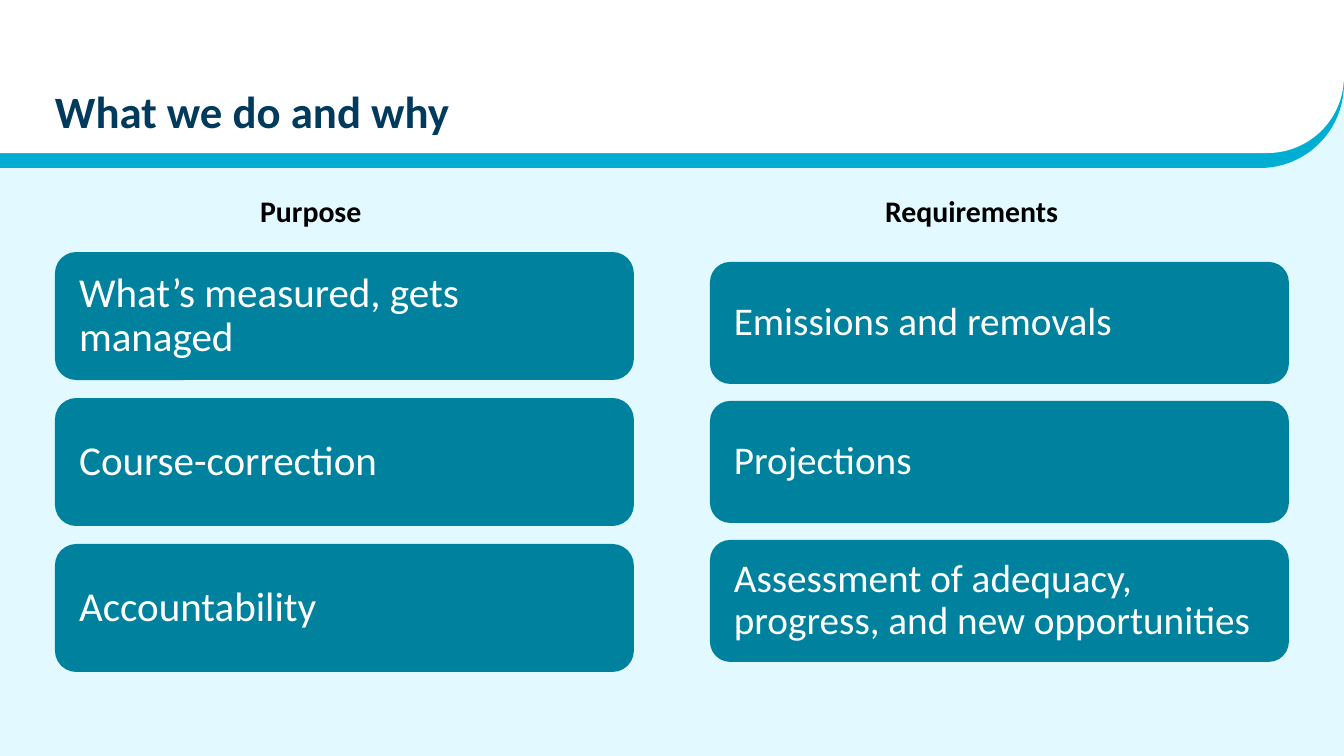
import pptx
import pptx.dml.color
import pptx.enum.shapes
import pptx.enum.text
import pptx.util

SLIDE_WIDTH, SLIDE_HEIGHT = 1344, 756
EMU_PER_PX = pptx.util.Inches(10) / SLIDE_WIDTH

TITLE = "What we do and why"
COLUMNS = [
    {
        "heading": "Purpose", "heading_left": 247,
        "left": 55, "top": 252, "card_height": 128, "gap": 18, "size": "purpose",
        "cards": ["What’s measured, gets managed", "Course-correction", "Accountability"],
    },
    {
        "heading": "Requirements", "heading_left": 872,
        "left": 710, "top": 262, "card_height": 122, "gap": 17, "size": "requirements",
        "cards": [
            "Emissions and removals",
            "Projections",
            "Assessment of adequacy, progress, and new opportunities",
        ],
    },
]
CARD_WIDTH = 579
CARD_INSET = 18
HEADING_TOP, HEADING_WIDTH, HEADING_HEIGHT = 186, 220, 50
TITLE_BOX = (55, 40, 1196, 147)
BANDS = [("accent", 168), ("white", 153)]

THEME = {
    "font": "Calibri",
    "colors": {
        "background": "E1F9FF", "accent": "00ADD3", "white": "FFFFFF",
        "title": "003A5D", "card": "00829E", "heading": "000000",
    },
    "sizes": {"title": 24, "heading": 16, "purpose": 22, "requirements": 21},
}


def px(*lengths):
    return [pptx.util.Emu(round(length * EMU_PER_PX)) for length in lengths]


def color(name):
    return pptx.dml.color.RGBColor.from_string(THEME["colors"][name])


def write(shape, text, size, color_name, inset=None, bold=False, line_spacing=None):
    """Put one left-aligned, vertically centred paragraph in a shape."""
    frame = shape.text_frame
    frame.text = text
    frame.word_wrap = True
    frame.auto_size = pptx.enum.text.MSO_AUTO_SIZE.NONE
    frame.vertical_anchor = pptx.enum.text.MSO_ANCHOR.MIDDLE
    if inset is not None:
        (margin,) = px(inset)
        frame.margin_left = frame.margin_right = margin
        frame.margin_top = frame.margin_bottom = margin
    paragraph = frame.paragraphs[0]
    paragraph.alignment = pptx.enum.text.PP_ALIGN.LEFT
    paragraph.line_spacing = line_spacing
    font = paragraph.runs[0].font
    font.name = THEME["font"]
    font.size = pptx.util.Pt(THEME["sizes"][size])
    font.bold = bold
    font.color.rgb = color(color_name)


def add_filled_shape(slide, kind, box, color_name):
    shape = slide.shapes.add_shape(kind, *px(*box))
    shape.shadow.inherit = False
    shape.fill.solid()
    shape.fill.fore_color.rgb = color(color_name)
    shape.line.fill.background()
    return shape


def add_header(slide):
    kind = pptx.enum.shapes.MSO_SHAPE.ROUND_1_RECTANGLE
    for color_name, height in BANDS:
        band = add_filled_shape(slide, kind, (0, 0, SLIDE_WIDTH, height), color_name)
        band.adjustments[0] = 0.5
        # Half a turn plus a flip moves the round corner to the bottom right.
        band.rotation = 180
        band._element.spPr.get_or_add_xfrm().set("flipH", "1")

    title = slide.shapes.title
    title.left, title.top, title.width, title.height = px(*TITLE_BOX)
    write(title, TITLE, "title", "title", inset=0, bold=True, line_spacing=0.9)
    slide.shapes._spTree.append(title._element)  # in front of the bands


def add_column(slide, column):
    heading = slide.shapes.add_textbox(
        *px(column["heading_left"], HEADING_TOP, HEADING_WIDTH, HEADING_HEIGHT))
    write(heading, column["heading"], "heading", "heading", bold=True)

    kind = pptx.enum.shapes.MSO_SHAPE.ROUNDED_RECTANGLE
    height = column["card_height"]
    for row, text in enumerate(column["cards"]):
        top = column["top"] + row * (height + column["gap"])
        card = add_filled_shape(slide, kind, (column["left"], top, CARD_WIDTH, height), "card")
        write(card, text, column["size"], "white", inset=CARD_INSET, line_spacing=0.9)


def main():
    presentation = pptx.Presentation()
    presentation.slide_width, presentation.slide_height = px(SLIDE_WIDTH, SLIDE_HEIGHT)
    title_only = presentation.slide_layouts.get_by_name("Title Only")
    slide = presentation.slides.add_slide(title_only)
    slide.background.fill.solid()
    slide.background.fill.fore_color.rgb = color("background")
    add_header(slide)
    for column in COLUMNS:
        add_column(slide, column)
    presentation.save("out.pptx")


if __name__ == "__main__":
    main()
